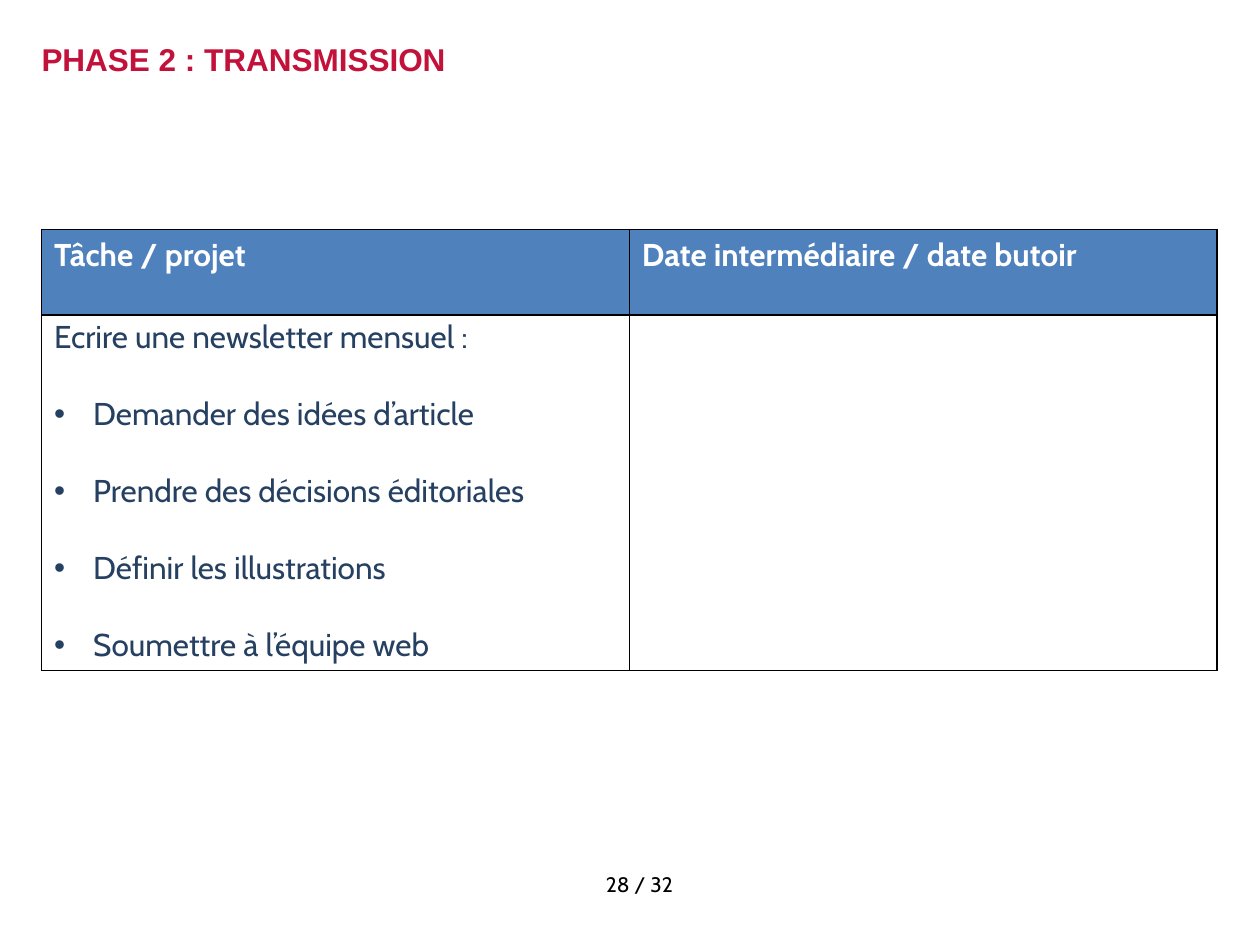
from lxml import etree
from pptx import Presentation
from pptx.dml.color import RGBColor
from pptx.enum.text import PP_ALIGN
from pptx.oxml.ns import qn
from pptx.util import Inches, Pt

CENTER = PP_ALIGN.CENTER
BLACK = "000000"
WHITE = "FFFFFF"
RED = "C2113A"
BLUE = "4F81BD"
NAVY = "254061"

HEADINGS = ["Tâche / projet", "Date intermédiaire / date butoir"]
PROJECT = "Ecrire une newsletter mensuel :"
STEPS = [
    "Demander des idées d’article",
    "Prendre des décisions éditoriales",
    "Définir les illustrations",
    "Soumettre à l’équipe web",
]


def color(value):
    return RGBColor.from_string(value)


def add_run(paragraph, text, size, font, tint, bold=False):
    run = paragraph.add_run()
    run.text = text
    run.font.size = Pt(size)
    run.font.name = font
    run.font.bold = bold
    run.font.color.rgb = color(tint)


def add_bullet(paragraph):
    properties = paragraph._p.get_or_add_pPr()
    properties.set("marL", str(Inches(0.31)))
    properties.set("indent", str(-Inches(0.31)))
    font = etree.SubElement(properties, qn("a:buFont"))
    font.set("typeface", "Arial")
    bullet = etree.SubElement(properties, qn("a:buChar"))
    bullet.set("char", "•")


def add_borders(cell):
    properties = cell._tc.get_or_add_tcPr()
    for position, side in enumerate(("lnL", "lnR", "lnT", "lnB")):
        line = etree.Element(qn(f"a:{side}"), w=str(Pt(1)))
        fill = etree.SubElement(line, qn("a:solidFill"))
        etree.SubElement(fill, qn("a:srgbClr"), val=BLACK)
        properties.insert(position, line)


def add_title(slide, left, top, width, height):
    frame = slide.shapes.add_textbox(left, top, width, height).text_frame
    frame.word_wrap = True
    frame.margin_left = frame.margin_right = frame.margin_bottom = 0
    frame.margin_top = Inches(0.03)
    add_run(frame.paragraphs[0], "PHASE 2 : TRANSMISSION", 18, "Arial", RED, True)


def add_page_number(slide, left, top, width, height):
    frame = slide.shapes.add_textbox(left, top, width, height).text_frame
    frame.word_wrap = True
    paragraph = frame.paragraphs[0]
    paragraph.alignment = CENTER
    add_run(paragraph, "28 / 32", 12, "Cabin", BLACK)


def fill_tasks(frame):
    for index, text in enumerate([PROJECT] + STEPS):
        paragraph = frame.add_paragraph() if index else frame.paragraphs[0]
        paragraph.line_spacing = Pt(20)
        paragraph.space_after = Pt(12)
        if index:
            paragraph.space_before = Pt(12)
            add_bullet(paragraph)
        add_run(paragraph, text, 18, "Cabin", NAVY)


def add_task_table(slide, left, top, width, height):
    table = slide.shapes.add_table(2, len(HEADINGS), left, top, width, height).table
    header_height = Inches(0.68)
    table.rows[0].height = header_height
    table.rows[1].height = height - header_height
    for column, heading in enumerate(HEADINGS):
        header, body = table.cell(0, column), table.cell(1, column)
        header.fill.solid()
        header.fill.fore_color.rgb = color(BLUE)
        body.fill.background()
        add_borders(header)
        add_borders(body)
        add_run(header.text_frame.paragraphs[0], heading, 18, "Cabin", WHITE, True)
    fill_tasks(table.cell(1, 0).text_frame)


def main():
    deck = Presentation()
    deck.slide_width = Inches(10)
    deck.slide_height = Inches(7.5)
    slide = deck.slides.add_slide(deck.slide_layouts[6])
    add_title(slide, Inches(0.33), Inches(0.29), Inches(9.33), Inches(0.4))
    add_page_number(slide, Inches(4.38), Inches(6.87), Inches(1.39), Inches(0.31))
    add_task_table(slide, Inches(0.33), Inches(1.82), Inches(9.33), Inches(3.5))
    deck.save("out.pptx")


if __name__ == "__main__":
    main()
